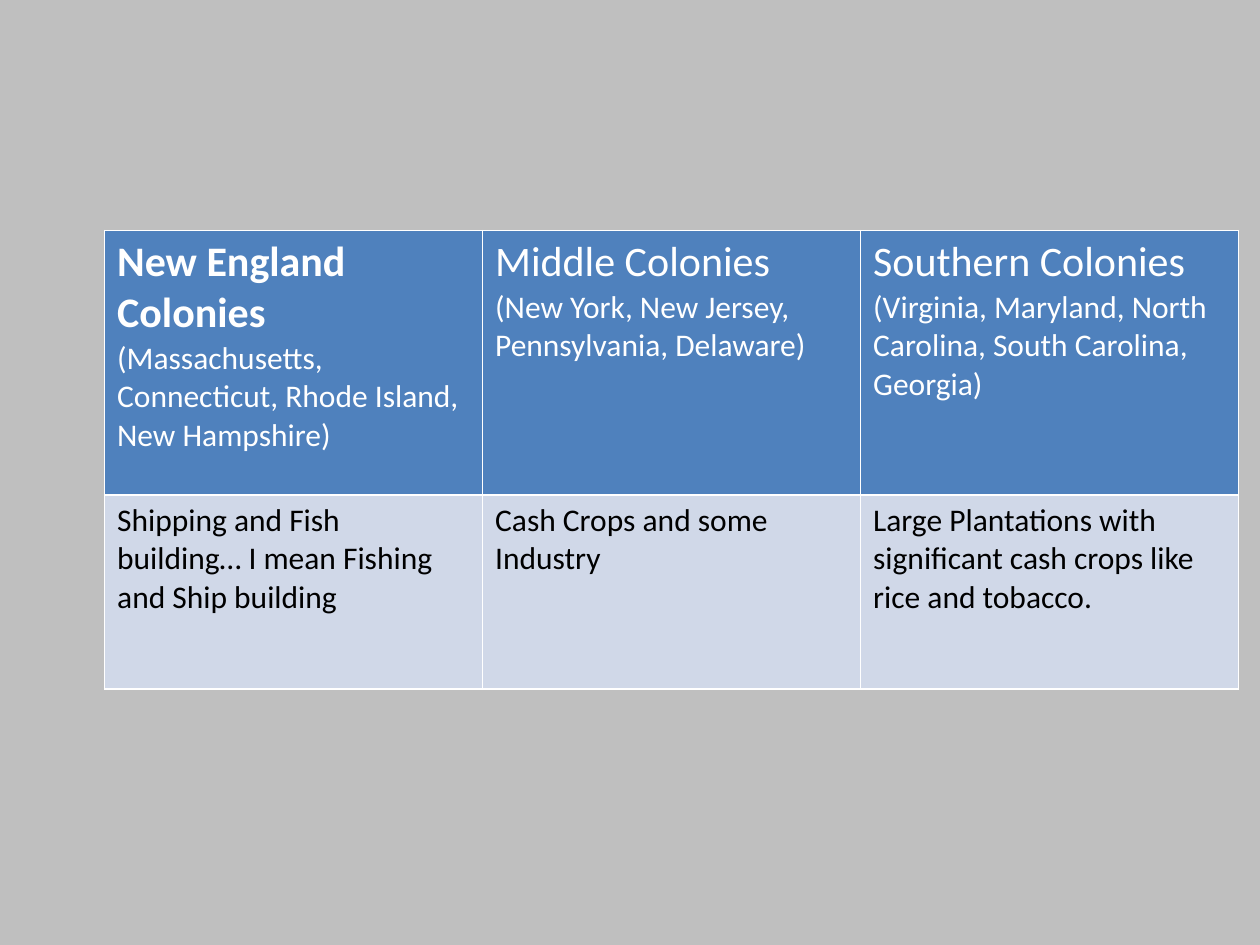
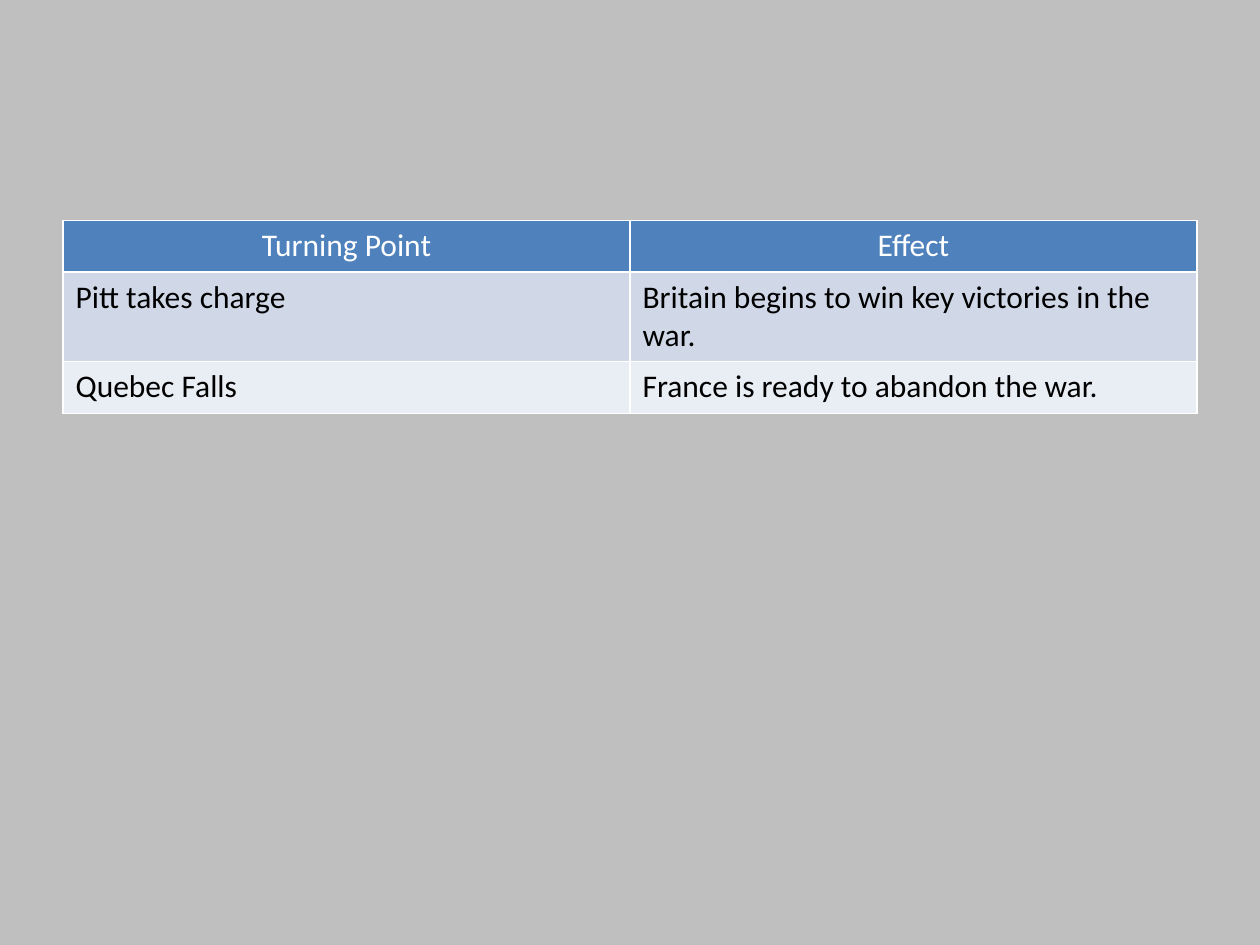
from pptx import Presentation
from pptx.dml.color import RGBColor
from pptx.enum import text
from pptx.util import Inches, Pt

BACKGROUND = "BFBFBF"
HEADER_FILL = "4F81BD"
BAND_FILLS = ["D0D8E8", "E9EDF4"]
HEADER_TEXT = "FFFFFF"
BODY_TEXT = "000000"
BODY_SIZE = 18
HEADING_SIZE = 24
BLANK_LAYOUT = 6


def paint(fill, color):
    fill.solid()
    fill.fore_color.rgb = RGBColor.from_string(color)


def write_cell(cell, lines, fill, color, align=None):
    """Fill a cell with one paragraph for each (wording, size, bold) line."""
    paint(cell.fill, fill)
    frame = cell.text_frame
    for number, (wording, size, bold) in enumerate(lines):
        paragraph = frame.add_paragraph() if number else frame.paragraphs[0]
        paragraph.alignment = align
        run = paragraph.add_run()
        run.text = wording
        font_format = {"name": "Calibri", "size": Pt(size), "bold": bold}
        for attribute, value in font_format.items():
            setattr(run.font, attribute, value)
        run.font.color.rgb = RGBColor.from_string(color)


def add_grid(slide, left, top, width, row_heights, header, body, header_align=None):
    """Add a table of equal columns with a header row and banded body rows."""
    frame = slide.shapes.add_table(
        len(row_heights), len(header),
        Inches(left), Inches(top), Inches(width), Inches(sum(row_heights)))
    grid = frame.table
    for row, height in zip(grid.rows, row_heights):
        row.height = Inches(height)
    for column, lines in enumerate(header):
        write_cell(grid.cell(0, column), lines, HEADER_FILL, HEADER_TEXT, header_align)
    for number, entries in enumerate(body):
        band = BAND_FILLS[number % len(BAND_FILLS)]
        for column, entry in enumerate(entries):
            write_cell(grid.cell(number + 1, column),
                       [(entry, BODY_SIZE, False)], band, BODY_TEXT)


def add_colonies(slide):
    regions = [
        ("New England Colonies", True,
         "(Massachusetts, Connecticut, Rhode Island, New Hampshire)",
         "Shipping and Fish building… I mean Fishing and Ship building"),
        ("Middle Colonies", False,
         "(New York, New Jersey, Pennsylvania, Delaware)",
         "Cash Crops and some Industry"),
        ("Southern Colonies", False,
         "(Virginia, Maryland, North Carolina, South Carolina, Georgia)",
         "Large Plantations with significant cash crops like rice and tobacco."),
    ]
    header = [[(region, HEADING_SIZE, bold), (members, BODY_SIZE, False)]
              for region, bold, members, _ in regions]
    economies = [economy for *_, economy in regions]
    add_grid(slide, 0.83, 1.83, 9, [2.1, 1.54], header, [economies])


def add_turning_points(slide):
    header = [[(heading, BODY_SIZE, False)] for heading in ("Turning Point", "Effect")]
    events = [
        ("Pitt takes charge", "Britain begins to win key victories in the war."),
        ("Quebec Falls", "France is ready to abandon the war."),
    ]
    add_grid(slide, 0.5, 1.75, 9, [0.41, 0.7, 0.41], header, events,
             text.PP_ALIGN.CENTER)


def main():
    prs = Presentation()
    prs.slide_width, prs.slide_height = Inches(10), Inches(7.5)
    paint(prs.slide_master.background.fill, BACKGROUND)
    for add_content in (add_colonies, add_turning_points):
        add_content(prs.slides.add_slide(prs.slide_layouts[BLANK_LAYOUT]))
    prs.save("out.pptx")


if __name__ == "__main__":
    main()
